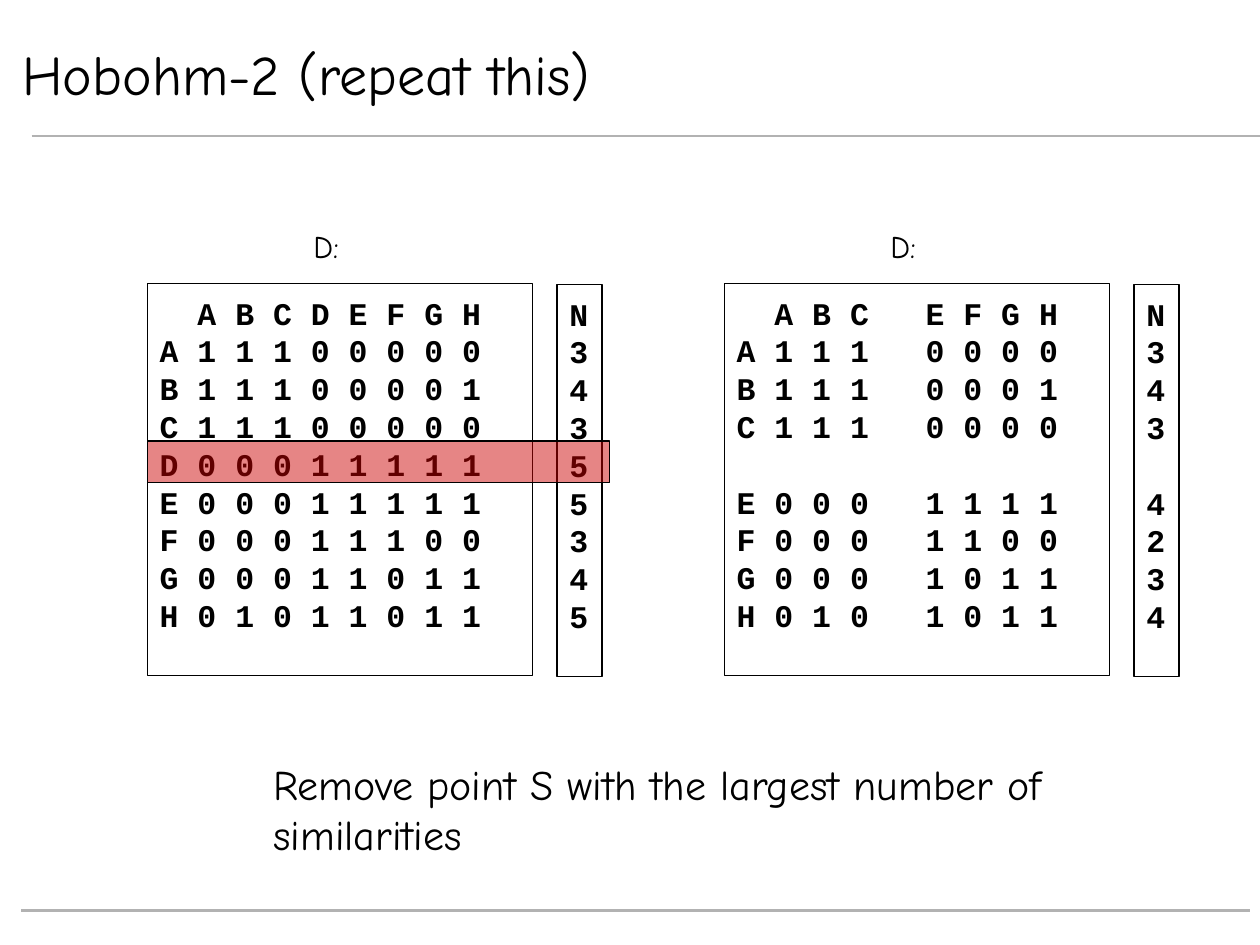
from lxml.etree import SubElement
from pptx import Presentation
from pptx.dml.color import RGBColor
from pptx.enum.shapes import MSO_CONNECTOR, MSO_SHAPE
from pptx.enum.text import MSO_ANCHOR, PP_ALIGN
from pptx.oxml.ns import qn
from pptx.util import Cm, Pt

SANS, MONO = "Comic Neue", "Courier New"
PITCH = 21.6
STEP = 0.762
HEAD = "ABCDEFGH"
FULL = ["11100000", "11100001", "11100000", "00011111", "00011111",
        "00011100", "00011011", "01011011"]
CUT = HEAD.index("D")


def paint(form, tint):
    """Set a solid colour on a fill or line."""
    if hasattr(form, "solid"):
        form.solid()
        form.fore_color.rgb = RGBColor.from_string(tint)
    else:
        form.color.rgb = RGBColor.from_string(tint)


def write(frame, rows, font=SANS, size=18, bold=False, pitch=None, tabs=0,
          top=0.13, anchor=MSO_ANCHOR.TOP):
    """Write rows as paragraphs, turning an empty row into space before the next."""
    frame.word_wrap = True
    frame.vertical_anchor = anchor
    frame.margin_left = frame.margin_right = Cm(0.25)
    frame.margin_top, frame.margin_bottom = Cm(top), Cm(0.13)
    gap, para = 0, None
    for row in rows:
        if not row:
            gap += pitch
            continue
        para = frame.add_paragraph() if para else frame.paragraphs[0]
        para.alignment = PP_ALIGN.LEFT
        if pitch:
            para.line_spacing = Pt(pitch)
        if gap:
            para.space_before = Pt(gap)
        if tabs:
            stops = SubElement(para._p.get_or_add_pPr(), qn("a:tabLst"))
            for i in range(tabs):
                SubElement(stops, qn("a:tab"), pos=str(Cm(STEP * (i + 1))), algn="l")
        run = para.add_run()
        run.text = row
        run.font.name, run.font.size, run.font.bold = font, Pt(size), bold
        run.font.color.rgb = RGBColor.from_string("000000")
        gap = 0


def rule(slide, x, y, wide):
    """Draw a grey level line."""
    line = slide.shapes.add_connector(
        MSO_CONNECTOR.STRAIGHT, Cm(x), Cm(y), Cm(x + wide), Cm(y))
    paint(line.line, "B2B2B2")
    line.line.width = Pt(1.5)
    SubElement(line._element.spPr, qn("a:effectLst"))


def box(slide, x, y, wide, high, tint=None, alpha=100):
    """Draw a black-edged rectangle and return it."""
    shape = slide.shapes.add_shape(
        MSO_SHAPE.RECTANGLE, Cm(x), Cm(y), Cm(wide), Cm(high))
    shape.shadow.inherit = False
    paint(shape.line, "000000")
    shape.line.width = Pt(0.75)
    if tint:
        paint(shape.fill, tint)
        mark = shape._element.spPr.find(".//" + qn("a:srgbClr"))
        SubElement(mark, qn("a:alpha"), val=str(alpha * 1000))
    else:
        shape.fill.background()
    return shape


def label(slide, text, x, y, wide, high, **style):
    """Add a text box."""
    area = slide.shapes.add_textbox(Cm(x), Cm(y), Cm(wide), Cm(high))
    write(area.text_frame, [text], **style)


def panel(slide, x, cut=None):
    """Draw a matrix and its row counts, with point cut left out."""
    def join(name, cells):
        return "\t".join([name] + ["" if i == cut else c for i, c in enumerate(cells)])

    rows, sums = [join("", HEAD)], ["N"]
    for i, cells in enumerate(FULL):
        kept = [c for j, c in enumerate(cells) if j != cut]
        rows.append("" if i == cut else join(HEAD[i], cells))
        sums.append("" if i == cut else str(kept.count("1")))
    style = dict(font=MONO, bold=True, pitch=PITCH, top=0.2)
    label(slide, "D:", x + 3.1, 4.45, 1.35, 1.02)
    write(box(slide, x, 5.72, 7.77, 7.9).text_frame, rows, tabs=len(HEAD), **style)
    write(box(slide, x + 8.26, 5.74, 0.91, 7.9).text_frame, sums, **style)


def title(slide, text):
    """Place and fill the title."""
    shape = slide.shapes.title
    shape.left, shape.top, shape.width, shape.height = (
        Cm(0.2), Cm(0.84), Cm(19.89), Cm(1.27))
    paint(shape.fill, "FFFFFF")
    paint(shape.line, "FFFFFF")
    write(shape.text_frame, [text], size=32, anchor=MSO_ANCHOR.MIDDLE)


def main():
    """Build the slide and save it."""
    deck = Presentation()
    deck.slide_width, deck.slide_height = Cm(25.4), Cm(19.05)
    slide = deck.slides.add_slide(deck.slide_layouts[5])
    rule(slide, 0.64, 2.74, 24.76)
    rule(slide, 0.43, 18.36, 24.76)
    title(slide, "Hobohm-2 (repeat this)")
    panel(slide, 2.97)
    box(slide, 2.97, 8.89, 9.32, 0.84, tint="CC0000", alpha=48)
    panel(slide, 14.6, CUT)
    label(slide, "Remove point S with the largest number of similarities",
          5.26, 15.16, 17.4, 2.29, size=24)
    deck.save("out.pptx")


if __name__ == "__main__":
    main()
